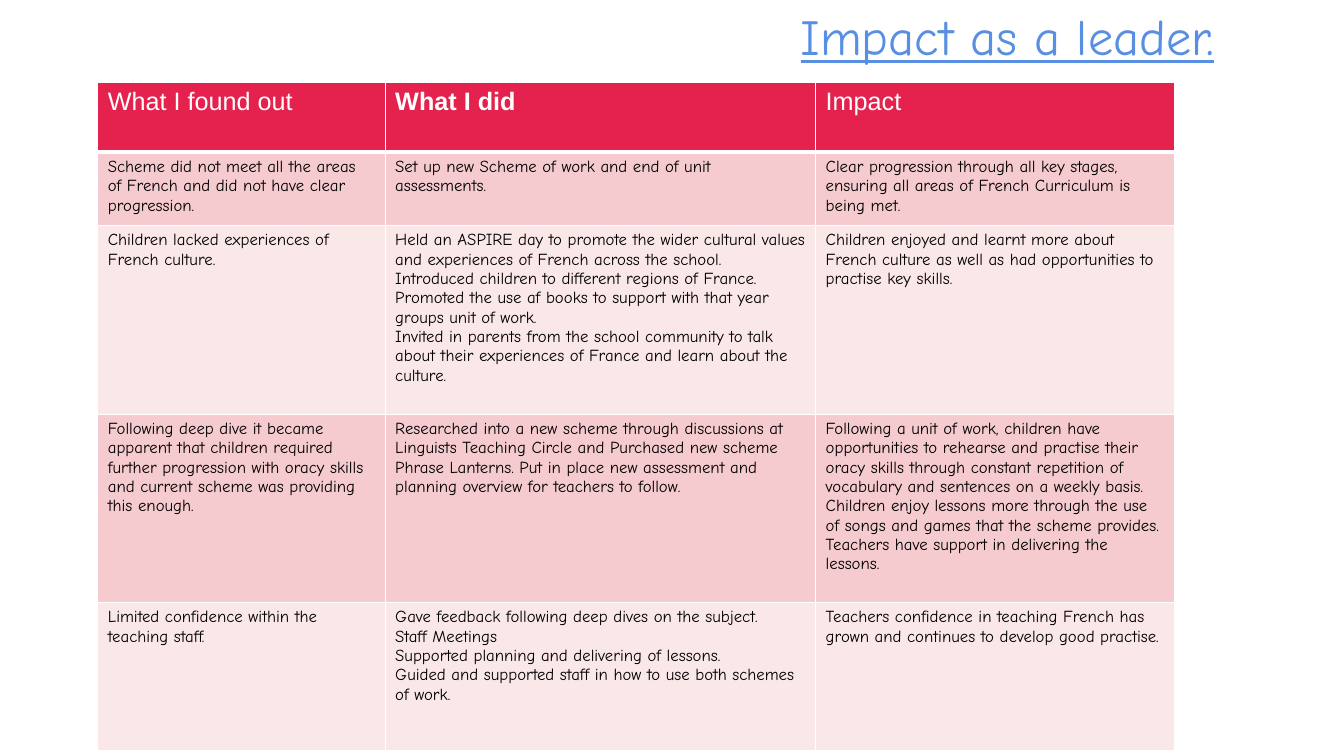
from dataclasses import dataclass

from lxml import etree
from pptx import Presentation
from pptx.dml.color import RGBColor
from pptx.enum.text import MSO_ANCHOR, MSO_AUTO_SIZE, PP_ALIGN
from pptx.oxml.ns import qn
from pptx.util import Inches, Pt

TOP = MSO_ANCHOR.TOP
LEFT = PP_ALIGN.LEFT
NO_AUTOSIZE = MSO_AUTO_SIZE.NONE
TITLE_ONLY = 5


@dataclass(frozen=True)
class Theme:
    heading_font: str = "Arial"
    body_font: str = "Comic Neue"
    title_color: str = "588FE2"
    header_fill: str = "E5224E"
    band_fills: tuple = ("F5CBCF", "FAE7E8")
    white: str = "FFFFFF"
    black: str = "000000"
    title_size: int = 36
    header_size: int = 18
    body_size: int = 12
    rule: int = 1
    header_rule: int = 3


class ImpactSlide:
    """Builds the slide's elements in one theme."""

    def __init__(self, presentation, theme):
        self.theme = theme
        self.slide = presentation.slides.add_slide(presentation.slide_layouts[TITLE_ONLY])

    def add_run(self, paragraph, wording, font, size, color, bold=False, underline=False):
        run = paragraph.add_run()
        run.text = wording
        run.font.name = font
        run.font.size = Pt(size)
        run.font.color.rgb = RGBColor.from_string(color)
        run.font.bold = bold
        run.font.underline = underline

    def title(self, wording, left, top, width, height):
        heading = self.slide.shapes.title
        heading.left, heading.top = Inches(left), Inches(top)
        heading.width, heading.height = Inches(width), Inches(height)
        frame = heading.text_frame
        frame.word_wrap = True
        frame.auto_size = NO_AUTOSIZE
        frame.vertical_anchor = TOP
        paragraph = frame.paragraphs[0]
        paragraph.alignment = LEFT
        style = self.theme
        self.add_run(paragraph, wording, style.body_font, style.title_size,
                     style.title_color, underline=True)

    def borders(self, cell, top, bottom):
        properties = cell._tc.get_or_add_tcPr()
        widths = {"lnL": self.theme.rule, "lnR": self.theme.rule, "lnT": top, "lnB": bottom}
        for side, width in widths.items():
            line = etree.SubElement(properties, qn(f"a:{side}"), w=str(Pt(width)))
            fill = etree.SubElement(line, qn("a:solidFill"))
            etree.SubElement(fill, qn("a:srgbClr"), val=self.theme.white)

    def cell(self, cell, lines, row, bold):
        style = self.theme
        is_header = row == 0
        self.borders(cell,
                     style.header_rule if row == 1 else style.rule,
                     style.header_rule if is_header else style.rule)
        cell.fill.solid()
        band = style.band_fills[(row - 1) % len(style.band_fills)]
        cell.fill.fore_color.rgb = RGBColor.from_string(style.header_fill if is_header else band)
        cell.vertical_anchor = TOP
        frame = cell.text_frame
        look = ((style.heading_font, style.header_size, style.white) if is_header
                else (style.body_font, style.body_size, style.black))
        for index, line in enumerate(lines):
            paragraph = frame.add_paragraph() if index else frame.paragraphs[0]
            self.add_run(paragraph, line, *look, bold=bold)

    def table(self, rows, left, top, widths, heights, bold_header):
        table = self.slide.shapes.add_table(
            len(rows), len(widths), Inches(left), Inches(top),
            Inches(sum(widths)), Inches(sum(heights))).table
        for column, width in zip(table.columns, widths):
            column.width = Inches(width)
        for row, height in zip(table.rows, heights):
            row.height = Inches(height)
        for row_index, row in enumerate(rows):
            for column_index, lines in enumerate(row):
                bold = row_index == 0 and column_index == bold_header
                self.cell(table.cell(row_index, column_index), lines, row_index, bold)


IMPACT_ROWS = [
    (["What I found out"], ["What I did"], ["Impact"]),
    (["Scheme did not meet all the areas of French and did not have clear progression."],
     ["Set up new Scheme of work and end of unit assessments."],
     ["Clear progression through all key stages, ensuring all areas of French Curriculum "
      "is being met."]),
    (["Children lacked experiences of French culture."],
     ["Held an ASPIRE day to promote the wider cultural values and experiences of French "
      "across the school.",
      "Introduced children to different regions of France.",
      "Promoted the use af books to support with that year groups unit of work.",
      "Invited in parents from the school community to talk about their experiences of "
      "France and learn about the culture."],
     ["Children enjoyed and learnt more about French culture as well as had opportunities "
      "to practise key skills."]),
    (["Following deep dive it became apparent that children required further progression "
      "with oracy skills and current scheme was providing this enough."],
     ["Researched into a new scheme through discussions at Linguists Teaching Circle and "
      "Purchased new scheme Phrase Lanterns. Put in place new assessment and planning "
      "overview for teachers to follow."],
     ["Following a unit of work, children have opportunities to rehearse and practise their "
      "oracy skills through constant repetition of vocabulary and sentences on a weekly "
      "basis. Children enjoy lessons more through the use of songs and games that the "
      "scheme provides.",
      "Teachers have support in delivering the lessons."]),
    (["Limited confidence within the teaching staff."],
     ["Gave feedback following deep dives on the subject.",
      "Staff Meetings",
      "Supported planning and delivering of lessons.",
      "Guided and supported staff in how to use both schemes of work."],
     ["Teachers confidence in teaching French has grown and continues to develop good "
      "practise."]),
]


def main():
    presentation = Presentation()
    presentation.slide_width = Inches(13.33)
    presentation.slide_height = Inches(7.5)
    impact = ImpactSlide(presentation, Theme())
    impact.table(IMPACT_ROWS, 0.97, 0.82, widths=[2.85, 4.27, 3.56],
                 heights=[0.69, 0.73, 1.87, 1.87, 1.47], bold_header=1)
    impact.title("Impact as a leader.", 7.84, 0, 4.77, 0.71)
    presentation.save("out.pptx")


if __name__ == "__main__":
    main()
